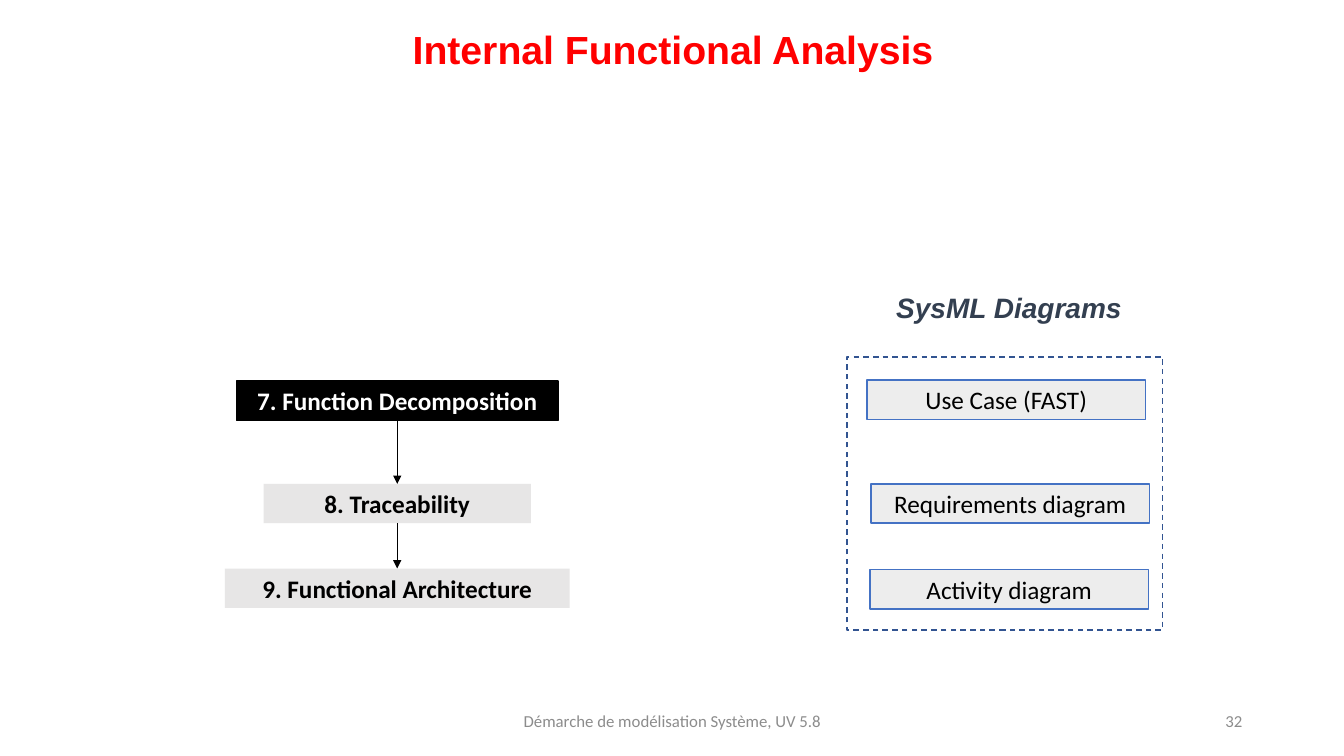
import lxml.etree
import pptx
import pptx.dml.color
import pptx.enum.dml
import pptx.enum.shapes
import pptx.enum.text
import pptx.oxml.ns
import pptx.util

Inches = pptx.util.Inches
Pt = pptx.util.Pt
ALIGN = pptx.enum.text.PP_ALIGN
ANCHOR = pptx.enum.text.MSO_ANCHOR
RECTANGLE = pptx.enum.shapes.MSO_SHAPE.RECTANGLE


def color(value):
    return pptx.dml.color.RGBColor.from_string(value)


def write(shape, text, size=18, font="Calibri", ink="000000", bold=False, italic=False,
          align=ALIGN.CENTER, anchor=ANCHOR.MIDDLE, spacing=None):
    frame = shape.text_frame
    frame.word_wrap = True
    frame.vertical_anchor = anchor
    paragraph = frame.paragraphs[0]
    paragraph.alignment = align
    paragraph.line_spacing = spacing
    run = paragraph.add_run()
    run.text = text
    run.font.size = Pt(size)
    run.font.name = font
    run.font.bold = bold
    run.font.italic = italic
    run.font.color.rgb = color(ink)


deck = pptx.Presentation()
deck.slide_width = Inches(13.33)
deck.slide_height = Inches(7.5)
slide = deck.slides.add_slide(deck.slide_layouts[6])
shapes = slide.shapes

title = shapes.add_textbox(Inches(1.55), Inches(-0.26), Inches(10.25), Inches(1.26))
write(title, "Internal Functional Analysis", size=28, font="Arial", ink="FF0000", bold=True, spacing=1.5)

footer = shapes.add_textbox(Inches(4.42), Inches(6.95), Inches(4.5), Inches(0.4))
write(footer, "Démarche de modélisation Système, UV 5.8", size=12, ink="8C8C8C")

page_number = shapes.add_textbox(Inches(9.42), Inches(6.95), Inches(3), Inches(0.4))
write(page_number, "32", size=12, ink="8C8C8C", align=ALIGN.RIGHT)

row_height = 0.39
step_center = 3.94
steps = []
for name, top, width, fill, ink in [
    ("7. Function Decomposition", 3.78, 3.19, "000000", "FFFFFF"),
    ("8. Traceability", 4.8, 2.65, "E7E6E6", "000000"),
    ("9. Functional Architecture", 5.64, 3.42, "E7E6E6", "000000"),
]:
    step = shapes.add_shape(RECTANGLE, Inches(step_center - width / 2), Inches(top),
                            Inches(width), Inches(row_height))
    step.shadow.inherit = False
    step.fill.solid()
    step.fill.fore_color.rgb = color(fill)
    if fill == "000000":
        step.line.color.rgb = color(fill)
        step.line.width = Pt(1)
    else:
        step.line.fill.background()
    write(step, name, ink=ink, bold=True)
    steps.append(step)

for upper, lower in zip(steps, steps[1:]):
    arrow = shapes.add_connector(pptx.enum.shapes.MSO_CONNECTOR.STRAIGHT, 0, 0, 0, 0)
    arrow.begin_connect(upper, 2)
    arrow.end_connect(lower, 0)
    arrow.line.color.rgb = color("000000")
    arrow.line.width = Pt(0.5)
    lxml.etree.SubElement(arrow.line._get_or_add_ln(), pptx.oxml.ns.qn("a:tailEnd"), type="triangle")
    lxml.etree.SubElement(arrow._element.spPr, pptx.oxml.ns.qn("a:effectLst"))

diagram_frame = shapes.add_shape(RECTANGLE, Inches(8.4), Inches(3.54), Inches(3.13), Inches(2.71))
diagram_frame.shadow.inherit = False
diagram_frame.fill.background()
diagram_frame.line.color.rgb = color("325491")
diagram_frame.line.width = Pt(1)
diagram_frame.line.dash_style = pptx.enum.dml.MSO_LINE.DASH

diagram_heading = shapes.add_textbox(Inches(8.79), Inches(2.83), Inches(2.86), Inches(0.44))
write(diagram_heading, "SysML Diagrams", size=20, font="Arial", ink="333F50", bold=True, italic=True,
      align=ALIGN.LEFT, anchor=ANCHOR.TOP)

for name, left, top in [
    ("Use Case (FAST)", 8.6, 3.77),
    ("Requirements diagram", 8.64, 4.8),
    ("Activity diagram", 8.63, 5.65),
]:
    diagram = shapes.add_shape(RECTANGLE, Inches(left), Inches(top), Inches(2.76), Inches(row_height))
    diagram.shadow.inherit = False
    diagram.fill.solid()
    diagram.fill.fore_color.rgb = color("EDEDED")
    diagram.line.color.rgb = color("4472C4")
    diagram.line.width = Pt(1)
    write(diagram, name)

deck.save("out.pptx")
